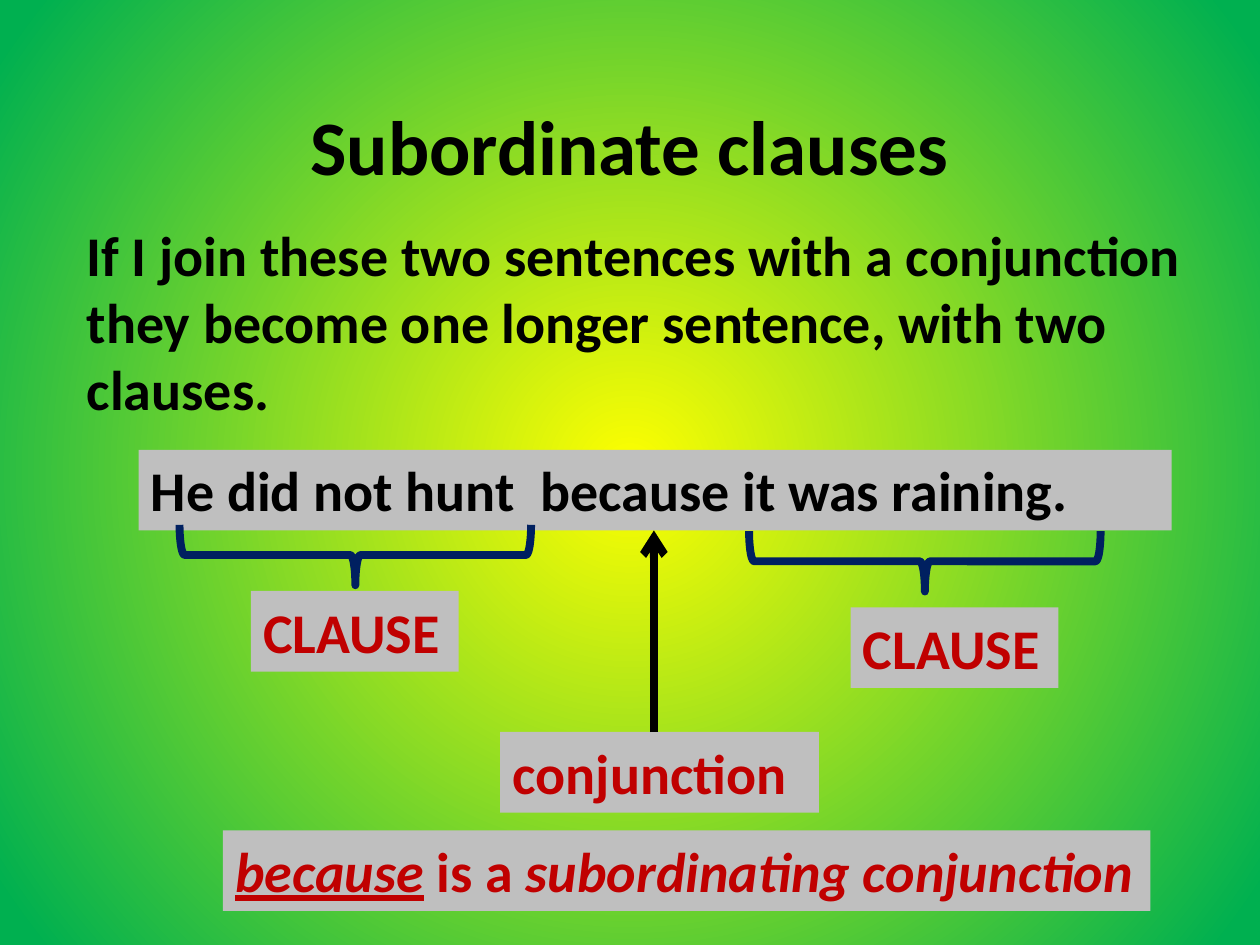
from lxml.etree import SubElement
from pptx import Presentation
from pptx.dml.color import RGBColor
from pptx.enum.shapes import MSO_CONNECTOR, MSO_SHAPE
from pptx.enum.text import MSO_ANCHOR, PP_ALIGN
from pptx.oxml.ns import qn
from pptx.util import Inches, Pt

YELLOW = RGBColor(0xFF, 0xFF, 0x00)
GREEN = RGBColor(0x00, 0xB0, 0x50)
GREY = RGBColor(0xBF, 0xBF, 0xBF)
RED = RGBColor(0xC0, 0x00, 0x00)
NAVY = RGBColor(0x00, 0x20, 0x60)
BLACK = RGBColor(0x00, 0x00, 0x00)

prs = Presentation()
prs.slide_width, prs.slide_height = Inches(10), Inches(7.5)
s = prs.slides.add_slide(prs.slide_layouts[6])

fill = s.background.fill
fill.gradient()
for stop, color, position in zip(fill.gradient_stops, (YELLOW, GREEN), (0, 0.96)):
    stop.color.rgb = color
    stop.position = position
grad = s._element.find(".//" + qn("a:gradFill"))
grad.remove(grad.find(qn("a:lin")))
focus = SubElement(grad, qn("a:path"), path="circle")
SubElement(focus, qn("a:fillToRect"), l="50000", t="50000", r="50000", b="50000")


def add_text(x, y, w, h, runs, color=BLACK, size=32, back=None):
    sp = s.shapes.add_textbox(Inches(x), Inches(y), Inches(w), Inches(h))
    if back is not None:
        sp.fill.solid()
        sp.fill.fore_color.rgb = back
    tf = sp.text_frame
    tf.word_wrap = True
    p = tf.paragraphs[0]
    for text, italic, underline in runs:
        r = p.add_run()
        r.text = text
        r.font.name = "Calibri"
        r.font.size = Pt(size)
        r.font.bold = True
        r.font.italic = italic
        r.font.underline = underline
        r.font.color.rgb = color
    return tf


title = add_text(0.75, 0.52, 8.5, 1.26, [("Subordinate clauses", False, False)], size=44)
title.vertical_anchor = MSO_ANCHOR.MIDDLE
title.paragraphs[0].alignment = PP_ALIGN.CENTER

add_text(0.59, 1.7, 9.06, 1.73, [(
    "If I join these two sentences with a conjunction they become "
    "one longer sentence, with two clauses.", False, False)])

for x, y, w, text, color in (
    (1.1, 3.57, 8.2, "He did not hunt  because it was raining.", BLACK),
    (1.99, 4.69, 1.65, "CLAUSE", RED),
    (6.75, 4.82, 1.65, "CLAUSE", RED),
    (3.97, 5.81, 2.53, "conjunction", RED),
):
    add_text(x, y, w, 0.64, [(text, False, False)], color, back=GREY)

for x, y in ((2.58, 3.01), (7.1, 3.06)):
    brace = s.shapes.add_shape(MSO_SHAPE.RIGHT_BRACE, Inches(x), Inches(y), Inches(0.48), Inches(2.79))
    brace.rotation = 90
    brace.shadow.inherit = False
    brace.fill.background()
    brace.line.color.rgb = NAVY
    brace.line.width = Pt(4.5)

arrow = s.shapes.add_connector(
    MSO_CONNECTOR.STRAIGHT, Inches(5.19), Inches(5.81), Inches(5.19), Inches(4.21))
arrow.line.color.rgb = BLACK
arrow.line.width = Pt(4.5)
SubElement(arrow.line._get_or_add_ln(), qn("a:tailEnd"), type="arrow")
SubElement(arrow._element.spPr, qn("a:effectLst"))

add_text(1.77, 6.59, 7.36, 0.64, [
    ("because", True, True),
    (" is a ", False, False),
    ("subordinating conjunction", True, False),
], RED, back=GREY)

prs.save("out.pptx")
